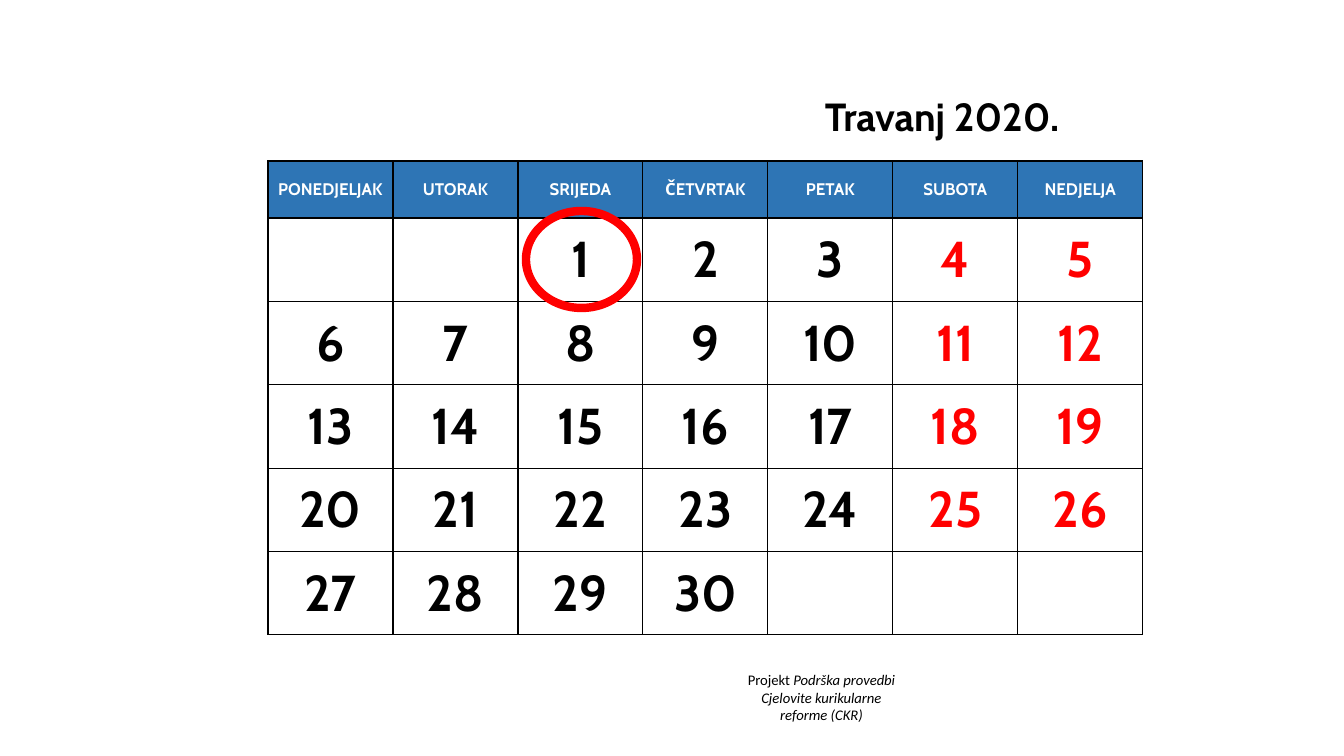
import dataclasses

import lxml.etree
import pptx
import pptx.dml.color
import pptx.enum.shapes
import pptx.enum.text
import pptx.oxml.ns
import pptx.util

EMU_PER_INCH = 914400
PX_PER_INCH = 100.8


def px(length):
    return pptx.util.Emu(round(length * EMU_PER_INCH / PX_PER_INCH))


def rgb(value):
    return pptx.dml.color.RGBColor.from_string(value)


@dataclasses.dataclass(frozen=True)
class Theme:
    black: str = "000000"
    white: str = "FFFFFF"
    red: str = "FF0000"
    header: str = "2E75B5"
    display_font: str = "Cabin"
    note_font: str = "Calibri"
    title_size: float = 28
    weekday_size: float = 12
    day_size: float = 36
    note_size: float = 10.5
    border_width: float = 1
    marker_width: float = 6


class CalendarSlide:
    def __init__(self, presentation, theme):
        self.theme = theme
        self.slide = presentation.slides.add_slide(presentation.slide_layouts[6])

    def style(self, paragraph, name, size, color, bold=False, centered=True):
        paragraph.font.name = name
        paragraph.font.size = pptx.util.Pt(size)
        paragraph.font.bold = bold
        paragraph.font.color.rgb = rgb(color)
        alignment = pptx.enum.text.PP_ALIGN
        paragraph.alignment = alignment.CENTER if centered else alignment.LEFT

    def text_frame(self, left, top, width, height):
        box = self.slide.shapes.add_textbox(px(left), px(top), px(width), px(height))
        box.text_frame.word_wrap = True
        box.text_frame.auto_size = pptx.enum.text.MSO_AUTO_SIZE.SHAPE_TO_FIT_TEXT
        return box.text_frame

    def title(self, text, left, top, width, height):
        paragraph = self.text_frame(left, top, width, height).paragraphs[0]
        paragraph.text = text
        theme = self.theme
        self.style(paragraph, theme.display_font, theme.title_size, theme.black,
                   bold=True, centered=False)

    def line_break(self, paragraph, size):
        paragraph.add_line_break()
        properties = lxml.etree.SubElement(paragraph._p[-1], pptx.oxml.ns.qn("a:rPr"))
        properties.set("sz", str(round(size * 100)))

    def note(self, paragraphs, left, top, width, height):
        frame = self.text_frame(left, top, width, height)
        theme = self.theme
        for index, runs in enumerate(paragraphs):
            paragraph = frame.add_paragraph() if index else frame.paragraphs[0]
            for text, italic in runs:
                for line_index, line in enumerate(text.split("\n")):
                    if line_index:
                        self.line_break(paragraph, theme.note_size)
                    run = paragraph.add_run()
                    run.text = line
                    run.font.italic = italic
            self.style(paragraph, theme.note_font, theme.note_size, theme.black)

    def borders(self, cell):
        properties = cell._tc.get_or_add_tcPr()
        qn = pptx.oxml.ns.qn
        for index, side in enumerate(("lnL", "lnR", "lnT", "lnB")):
            line = lxml.etree.Element(qn(f"a:{side}"))
            line.set("w", str(pptx.util.Pt(self.theme.border_width)))
            fill = lxml.etree.SubElement(line, qn("a:solidFill"))
            lxml.etree.SubElement(fill, qn("a:srgbClr")).set("val", self.theme.black)
            properties.insert(index, line)

    def cell(self, cell, text, size, color, fill=None):
        if fill:
            cell.fill.solid()
            cell.fill.fore_color.rgb = rgb(fill)
        else:
            cell.fill.background()
        self.borders(cell)
        cell.vertical_anchor = pptx.enum.text.MSO_ANCHOR.MIDDLE
        cell.text = text
        self.style(cell.text_frame.paragraphs[0], self.theme.display_font, size,
                   color, bold=True)

    def month(self, weekdays, first_column, day_count, left, top, column_width,
              header_height, body_height):
        theme = self.theme
        columns = len(weekdays)
        weeks = -(-(first_column + day_count) // columns)
        table = self.slide.shapes.add_table(
            weeks + 1, columns, px(left), px(top), px(column_width * columns),
            px(header_height + body_height)).table
        table.first_row = table.horz_banding = False
        table.rows[0].height = px(header_height)
        for column, weekday in enumerate(weekdays):
            table.columns[column].width = px(column_width)
            self.cell(table.cell(0, column), weekday, theme.weekday_size,
                      theme.white, theme.header)
        for week in range(weeks):
            table.rows[week + 1].height = px(body_height / weeks)
            for column in range(columns):
                day = week * columns + column - first_column + 1
                text = str(day) if 1 <= day <= day_count else ""
                color = theme.red if column >= columns - 2 else theme.black
                self.cell(table.cell(week + 1, column), text, theme.day_size, color)

    def marker(self, left, top, width, height):
        shape = self.slide.shapes.add_shape(
            pptx.enum.shapes.MSO_SHAPE.OVAL, px(left), px(top), px(width), px(height))
        shape.shadow.inherit = False
        shape.fill.background()
        shape.line.color.rgb = rgb(self.theme.red)
        shape.line.width = pptx.util.Pt(self.theme.marker_width)


def main():
    presentation = pptx.Presentation()
    presentation.slide_width = px(1344)
    presentation.slide_height = px(756)
    calendar = CalendarSlide(presentation, Theme())
    calendar.note(
        [[("Projekt ", False), ("Podrška provedbi", True)],
         [("Cjelovite kurikularne\nreforme (CKR)", True)]],
        705, 666, 233, 64)
    calendar.month(
        ["PONEDJELJAK", "UTORAK", "SRIJEDA", "ČETVRTAK", "PETAK", "SUBOTA", "NEDJELJA"],
        first_column=2, day_count=30, left=268, top=161, column_width=125,
        header_height=57, body_height=417)
    calendar.title("Travanj 2020.", 815, 87, 328, 57)
    calendar.marker(526, 211, 111, 97)
    presentation.save("out.pptx")


if __name__ == "__main__":
    main()
